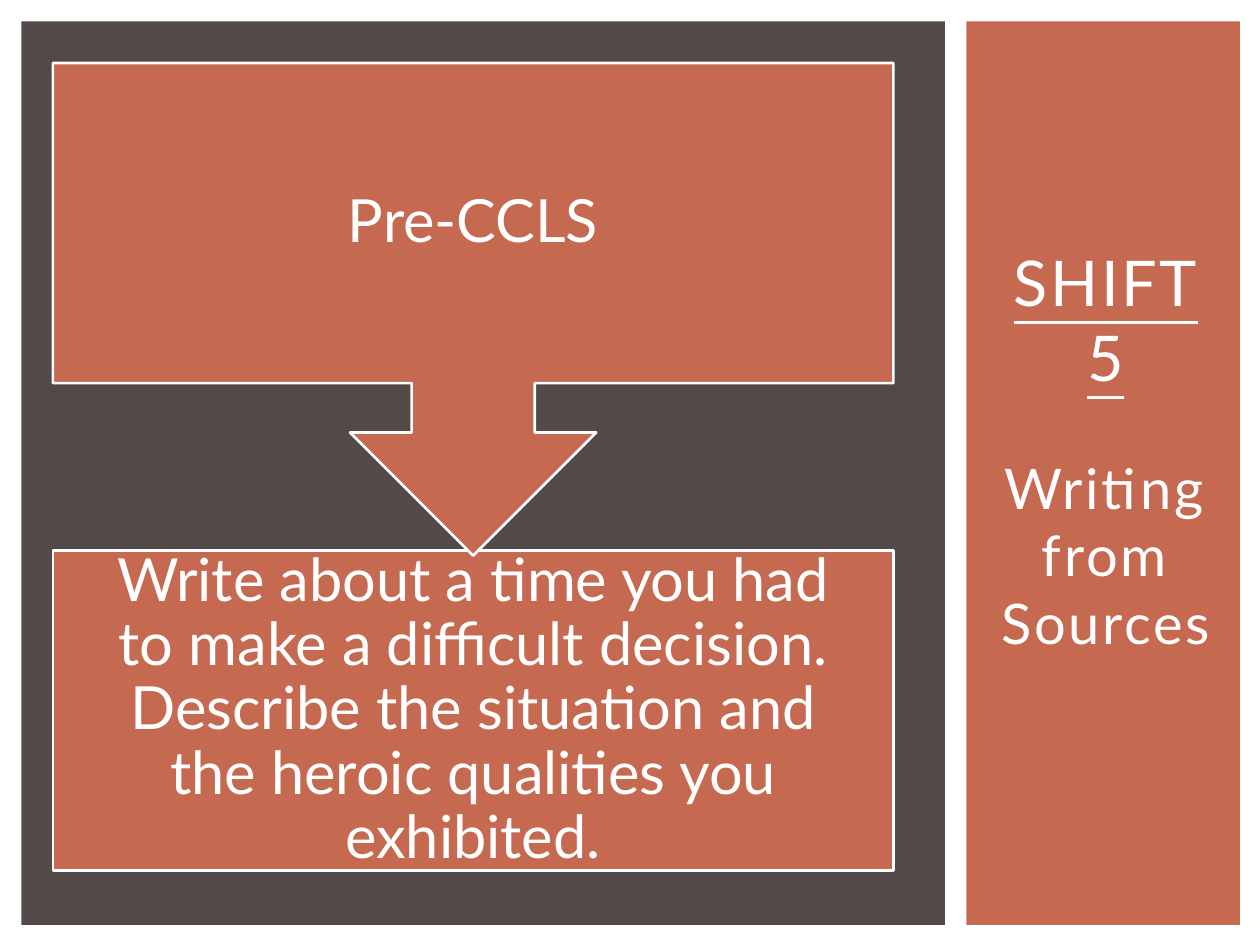
from pptx import Presentation
from pptx.dml.color import RGBColor
from pptx.enum import shapes, text
from pptx.util import Inches, Pt

COLORS = {"dark": "534949", "rust": "C66951", "white": "FFFFFF"}
FONT = "Lato"


def rgb(name):
    return RGBColor.from_string(COLORS[name])


def add_block(s, kind, box, fill, outlined=False):
    sp = s.shapes.add_shape(kind, *map(Inches, box))
    sp.shadow.inherit = False
    sp.fill.solid()
    sp.fill.fore_color.rgb = rgb(fill)
    if outlined:
        sp.line.color.rgb = rgb("white")
        sp.line.width = Pt(1.5)
    else:
        sp.line.fill.background()
    return sp


def format_paragraph(p, size):
    p.alignment = text.PP_ALIGN.CENTER
    for r in p.runs:
        r.font.size = Pt(size)
        r.font.name = FONT
        r.font.color.rgb = rgb("white")


def set_frame(tf, side, bottom):
    tf.word_wrap = True
    tf.auto_size = text.MSO_AUTO_SIZE.NONE
    tf.vertical_anchor = text.MSO_ANCHOR.MIDDLE
    tf.margin_left = tf.margin_right = Inches(side)
    tf.margin_bottom = Inches(bottom)


def write_step(sp, wording):
    tf = sp.text_frame
    set_frame(tf, 0.26, 0.26)
    tf.margin_top = Inches(0.26)
    tf.text = wording
    p = tf.paragraphs[0]
    p.line_spacing = 0.9
    format_paragraph(p, 34)


def add_sidebar(s, body, box):
    """Colour the panel behind the subtitle placeholder and fill in the heading."""
    x, y, w, h = box
    panel = add_block(s, shapes.MSO_SHAPE.RECTANGLE, box, "rust")
    body.element.addprevious(panel.element)
    body.left, body.top = Inches(x + 0.08), Inches(y + 0.5)
    body.width, body.height = Inches(w - 0.12), Inches(h - 1.09)
    tf = body.text_frame
    set_frame(tf, 0.15, 0.34)
    tf.text = "SHIFT 5\nWriting from Sources"
    heading, topic = tf.paragraphs
    for p, size, gap in ((heading, 36, 0), (topic, 32, 34)):
        format_paragraph(p, size)
        p.space_before = Pt(gap)
        for r in p.runs:
            r.font._element.set("spc", "150")
    heading.runs[0].font.underline = True


def add_process(s, box):
    """Draw the dark panel with a callout pointing down at the task below it."""
    x, y, w, h = box
    add_block(s, shapes.MSO_SHAPE.RECTANGLE, box, "dark")
    left, top, width, step_h = x + 0.25, y + 0.33, w - 0.66, 2.54
    task = add_block(s, shapes.MSO_SHAPE.RECTANGLE,
                     (left, top + 3.87, width, step_h), "rust", True)
    write_step(task, "Write about a time you had to make a difficult decision. "
                     "Describe the situation and the heroic qualities you exhibited.")
    callout = add_block(s, shapes.MSO_SHAPE.UP_ARROW_CALLOUT,
                        (left, top, width, 3.91), "rust", True)
    callout.rotation = 180
    label = s.shapes.add_textbox(*map(Inches, (left, top, width, step_h)))
    write_step(label, "Pre-CCLS")


def main():
    prs = Presentation()
    prs.slide_width, prs.slide_height = Inches(10), Inches(7.5)
    s = prs.slides.add_slide(prs.slide_layouts[0])
    title = s.shapes.title.element
    title.getparent().remove(title)
    add_sidebar(s, s.placeholders[1], (7.67, 0.17, 2.17, 7.17))
    add_process(s, (0.17, 0.17, 7.33, 7.17))
    prs.save("out.pptx")


if __name__ == "__main__":
    main()
